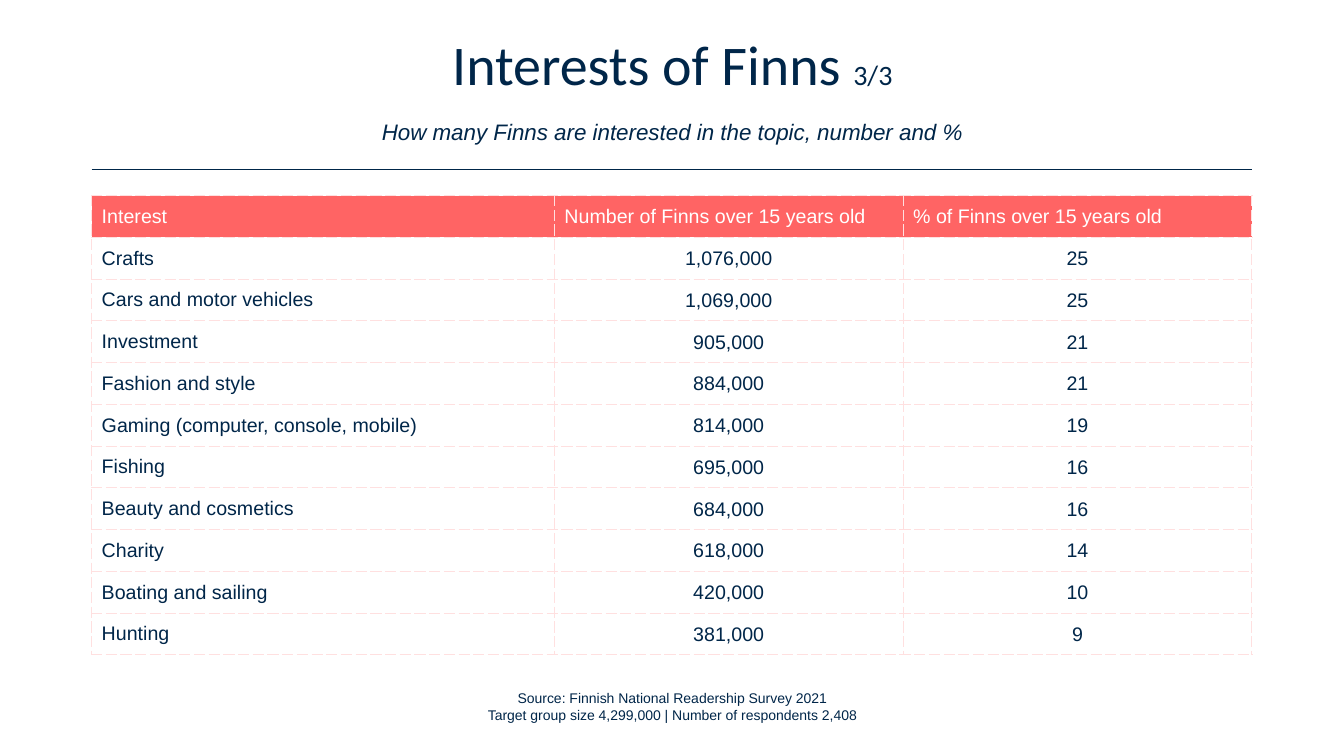
from dataclasses import dataclass

from lxml.etree import SubElement
from pptx import Presentation
from pptx.dml.color import RGBColor
from pptx.enum.shapes import MSO_CONNECTOR as Connector
from pptx.enum.text import MSO_ANCHOR as Anchor, MSO_AUTO_SIZE as AutoSize, PP_ALIGN as Align
from pptx.oxml import parse_xml
from pptx.oxml.ns import nsdecls, qn
from pptx.slide import Slide
from pptx.table import _Cell as Cell
from pptx.text.text import _Paragraph as Paragraph
from pptx.util import Cm, Pt


@dataclass(frozen=True)
class Theme:
    navy: str = "002649"
    coral: str = "FF6464"
    blush: str = "FFE0E0"
    white: str = "FFFFFF"
    heading_font: str = "Calibri"
    body_font: str = "Arial"
    title_size: int = 40
    page_size: int = 20
    subtitle_size: int = 16
    table_size: int = 14
    source_size: int = 10


@dataclass(frozen=True)
class Interest:
    topic: str
    number: str
    percent: str


THEME = Theme()
LEFT, RIGHT = 2.31, 31.55
COLUMN_WIDTHS = (11.66, 8.79, 8.79)
TABLE_TOP, TABLE_HEIGHT = 4.93, 11.58

HEADINGS = Interest("Interest", "Number of Finns over 15 years old", "% of Finns over 15 years old")
INTERESTS = [
    Interest("Crafts", "1,076,000", "25"),
    Interest("Cars and motor vehicles", "1,069,000", "25"),
    Interest("Investment", "905,000", "21"),
    Interest("Fashion and style", "884,000", "21"),
    Interest("Gaming (computer, console, mobile)", "814,000", "19"),
    Interest("Fishing", "695,000", "16"),
    Interest("Beauty and cosmetics", "684,000", "16"),
    Interest("Charity", "618,000", "14"),
    Interest("Boating and sailing", "420,000", "10"),
    Interest("Hunting", "381,000", "9"),
]


def add_text(paragraph: Paragraph, text: str, size: int, face: str = THEME.body_font,
             color: str = THEME.navy, italic: bool = False) -> None:
    run = paragraph.add_run()
    run.text = text
    font_format = {"size": Pt(size), "name": face, "italic": italic, "bold": False}
    for attribute, value in font_format.items():
        setattr(run.font, attribute, value)
    run.font.color.rgb = RGBColor.from_string(color)


def add_heading(slide: Slide) -> None:
    heading = slide.shapes.title
    place = {"left": Cm(2.34), "top": Cm(1.07), "width": Cm(29.21), "height": Cm(2.72)}
    for attribute, value in place.items():
        setattr(heading, attribute, value)
    heading.text_frame.vertical_anchor = Anchor.MIDDLE
    heading.text_frame.auto_size = AutoSize.NONE
    lines = heading.text_frame.paragraphs[0]
    spacing = {"alignment": Align.CENTER, "line_spacing": Pt(35),
               "space_before": Pt(0), "space_after": Pt(18)}
    for attribute, value in spacing.items():
        setattr(lines, attribute, value)
    add_text(lines, "Interests of Finns ", THEME.title_size, THEME.heading_font)
    add_text(lines, "3/3", THEME.page_size, THEME.heading_font)
    lines.add_line_break()
    add_text(lines, "How many Finns are interested in the topic, number and %",
             THEME.subtitle_size, italic=True)


def add_rule(slide: Slide) -> None:
    rule = slide.shapes.add_connector(Connector.STRAIGHT, Cm(LEFT), Cm(4.27), Cm(RIGHT), Cm(4.27))
    rule.line.color.rgb = RGBColor.from_string(THEME.navy)
    rule.line.width = Pt(1)
    SubElement(rule._element.spPr, qn("a:effectLst"))


def dash_borders(cell: Cell) -> None:
    properties = cell._tc.get_or_add_tcPr()
    for side in ("lnL", "lnR", "lnT", "lnB"):
        properties.append(parse_xml(
            f'<a:{side} {nsdecls("a")} w="{Pt(1)}"><a:solidFill><a:srgbClr val="{THEME.blush}"/>'
            f'</a:solidFill><a:prstDash val="sysDash"/></a:{side}>'))


def fill_cell(cell: Cell, text: str, is_heading: bool, is_figure: bool) -> None:
    dash_borders(cell)
    cell.vertical_anchor = Anchor.MIDDLE
    entry = cell.text_frame.paragraphs[0]
    if is_heading:
        cell.fill.solid()
        cell.fill.fore_color.rgb = RGBColor.from_string(THEME.coral)
    else:
        cell.fill.background()
    if is_figure:
        margins = {"margin_left": Cm(0.03), "margin_right": Cm(0.03),
                   "margin_top": Cm(0.03), "margin_bottom": Cm(0)}
        for attribute, value in margins.items():
            setattr(cell, attribute, value)
        entry.alignment = Align.CENTER
    add_text(entry, text, THEME.table_size, color=THEME.white if is_heading else THEME.navy)


def add_interests(slide: Slide) -> None:
    records = [HEADINGS, *INTERESTS]
    interests = slide.shapes.add_table(
        len(records), len(COLUMN_WIDTHS), Cm(LEFT), Cm(TABLE_TOP),
        Cm(sum(COLUMN_WIDTHS)), Cm(TABLE_HEIGHT)).table
    interests.first_row = interests.horz_banding = False
    for column, width in zip(interests.columns, COLUMN_WIDTHS):
        column.width = Cm(width)
    for row_index, record in enumerate(records):
        is_heading = row_index == 0
        for column_index, text in enumerate((record.topic, record.number, record.percent)):
            fill_cell(interests.cell(row_index, column_index), text, is_heading,
                      is_figure=column_index > 0 and not is_heading)


def add_source(slide: Slide) -> None:
    source = slide.shapes.add_textbox(Cm(10.36), Cm(17.25), Cm(13.16), Cm(1.12)).text_frame
    source.word_wrap = True
    source.auto_size = AutoSize.SHAPE_TO_FIT_TEXT
    lines = source.paragraphs[0]
    lines.alignment = Align.CENTER
    add_text(lines, "Source: Finnish National Readership Survey 2021", THEME.source_size)
    lines.add_line_break()
    add_text(lines, "Target group size 4,299,000 | Number of respondents 2,408", THEME.source_size)


def main() -> None:
    deck = Presentation()
    deck.slide_width, deck.slide_height = Cm(33.87), Cm(19.05)
    slide = deck.slides.add_slide(deck.slide_layouts.get_by_name("Title Only"))
    # Title, subtitle and dividing line
    add_heading(slide)
    add_rule(slide)
    # Survey figures and their source
    add_interests(slide)
    add_source(slide)
    deck.save("out.pptx")


if __name__ == "__main__":
    main()
